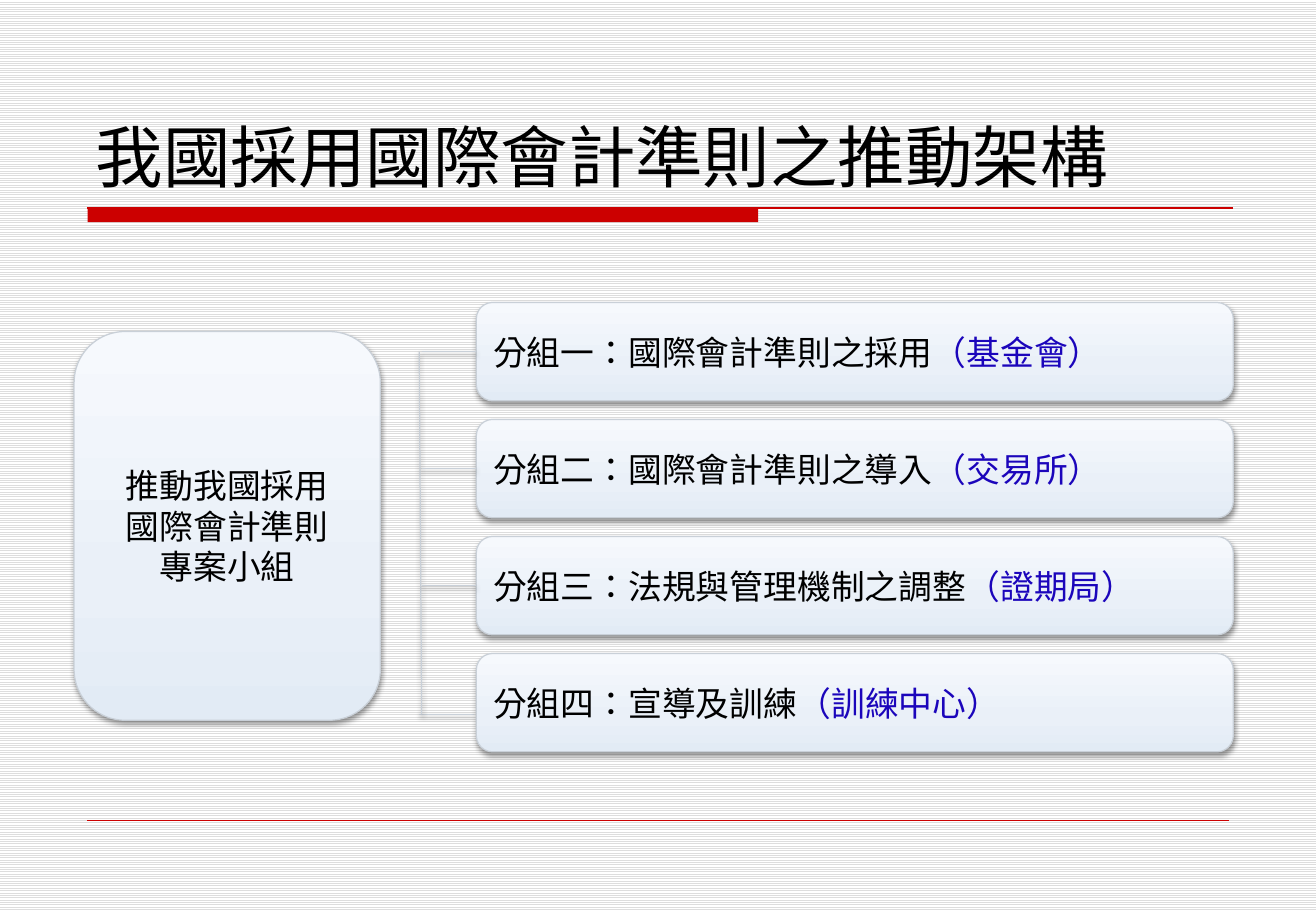
from lxml import etree
from pptx import Presentation
from pptx.dml.color import RGBColor
from pptx.enum import dml, lang, shapes, text
from pptx.oxml import ns
from pptx.util import Inches, Pt

TITLE = "我國採用國際會計準則之推動架構"
TEAM = ["推動我國採用", "國際會計準則", "專案小組"]
GROUPS = [
    ("分組一：國際會計準則之採用", "（基金會）"),
    ("分組二：國際會計準則之導入", "（交易所）"),
    ("分組三：法規與管理機制之調整", "（證期局）"),
    ("分組四：宣導及訓練", "（訓練中心）"),
]

BLACK = RGBColor(0, 0, 0)
WHITE = RGBColor(0xFF, 0xFF, 0xFF)
STRIPE = RGBColor(0xDD, 0xDD, 0xDD)
RED = RGBColor(0xCC, 0, 0)
BLUE = RGBColor(0x1B, 0x05, 0xBB)
EDGE = RGBColor(0xC9, 0xD0, 0xD8)
LOW = RGBColor(0xE2, 0xEB, 0xF5)
MID = RGBColor(0xEA, 0xF0, 0xF8)
HIGH = RGBColor(0xF6, 0xF9, 0xFD)
HEAD_FONT, BODY_FONT = "Noto Sans CJK SC", "DejaVu Sans"

# Lengths in inches
WIDE, TALL = 10.83, 7.5
LEFT, RIGHT = 0.72, 10.15
RULE_Y, FOOT_Y = 1.71, 6.75
CARD_X, CARD_Y, CARD_H = 3.92, 2.49, 0.81
LAST_Y = 5.38
STEP = (LAST_Y - CARD_Y) / (len(GROUPS) - 1)
TRUNK_X, TRUNK_END = 3.47, 5.88

deck = Presentation()
deck.slide_width, deck.slide_height = Inches(WIDE), Inches(TALL)
slide = deck.slides.add_slide(deck.slide_layouts[6])
back = slide.background.fill
back.patterned()
back.pattern = dml.MSO_PATTERN.LIGHT_HORIZONTAL
back.fore_color.rgb, back.back_color.rgb = STRIPE, WHITE


def effect(item, soft):
    """Replace the theme shadow by a soft one or by none."""
    props = item._element.spPr
    for old in props.findall(ns.qn("a:effectLst")):
        props.remove(old)
    group = etree.SubElement(props, ns.qn("a:effectLst"))
    if soft:
        shade = etree.SubElement(
            group, ns.qn("a:outerShdw"), blurRad=str(Pt(3.1)),
            dist=str(Pt(1.6)), dir="5400000", rotWithShape="0")
        color = etree.SubElement(shade, ns.qn("a:srgbClr"), val=str(BLACK))
        etree.SubElement(color, ns.qn("a:alpha"), val="38000")


def line(x1, y1, x2, y2, color=EDGE, width=0.75, soft=True):
    item = slide.shapes.add_connector(
        shapes.MSO_CONNECTOR.STRAIGHT, *map(Inches, (x1, y1, x2, y2)))
    item.line.color.rgb, item.line.width = color, Pt(width)
    effect(item, soft)
    return item


def card(x, y, w, h):
    item = slide.shapes.add_shape(
        shapes.MSO_SHAPE.ROUNDED_RECTANGLE, *map(Inches, (x, y, w, h)))
    item.line.color.rgb, item.line.width = EDGE, Pt(0.75)
    fill = item.fill
    fill.gradient()
    fill.gradient_angle = 90
    for stop, color in zip(fill.gradient_stops, (LOW, HIGH)):
        stop.color.rgb = color
    ends = item._element.spPr.find(".//" + ns.qn("a:gsLst"))
    mid = etree.Element(ns.qn("a:gs"), pos="35000")
    etree.SubElement(mid, ns.qn("a:srgbClr"), val=str(MID))
    ends.insert(1, mid)
    effect(item, True)
    item.text_frame.vertical_anchor = text.MSO_ANCHOR.MIDDLE
    item.text_frame.word_wrap = False
    return item


def style(para, size, face, align=text.PP_ALIGN.LEFT):
    para.alignment = align
    para.font.size, para.font.name = Pt(size), face
    para.font.color.rgb = BLACK


bar = slide.shapes.add_shape(
    shapes.MSO_SHAPE.RECTANGLE, *map(Inches, (LEFT, RULE_Y, 5.52, 0.12)))
bar.shadow.inherit = False
bar.fill.solid()
bar.fill.fore_color.rgb = RED
bar.line.fill.background()
line(LEFT, RULE_Y, RIGHT, RULE_Y, RED, 1, soft=False)
line(LEFT, FOOT_Y, 10.11, FOOT_Y, RED, 0.25, False)

head = slide.shapes.add_textbox(*map(Inches, (0.68, 0.33, 9.48, 1.33))).text_frame
head.word_wrap = True
head.vertical_anchor = text.MSO_ANCHOR.BOTTOM
head.margin_left = head.margin_right = Inches(0.11)
head.text = TITLE
style(head.paragraphs[0], 40, HEAD_FONT)

line(3.45, TRUNK_END, 3.9, TRUNK_END)
line(3.45, CARD_Y + CARD_H / 2, TRUNK_X, TRUNK_END)

team = card(0.61, 2.73, 2.52, 3.2).text_frame
team.text = "\n".join(TEAM)
for para in team.paragraphs:
    style(para, 20, BODY_FONT, text.PP_ALIGN.CENTER)

for i, (task, owner) in enumerate(GROUPS):
    top = CARD_Y + i * STEP
    box = card(CARD_X, top, RIGHT - CARD_X, CARD_H)
    para = box.text_frame.paragraphs[0]
    style(para, 20, BODY_FONT)
    for words in (task, owner):
        run = para.add_run()
        run.text = words
        run.font.language_id = lang.MSO_LANGUAGE_ID.TRADITIONAL_CHINESE
    run.font.color.rgb = BLUE
    if i < len(GROUPS) - 1:
        middle = top + CARD_H / 2
        line(TRUNK_X, middle, CARD_X, middle).end_connect(box, 1)

deck.save("out.pptx")
